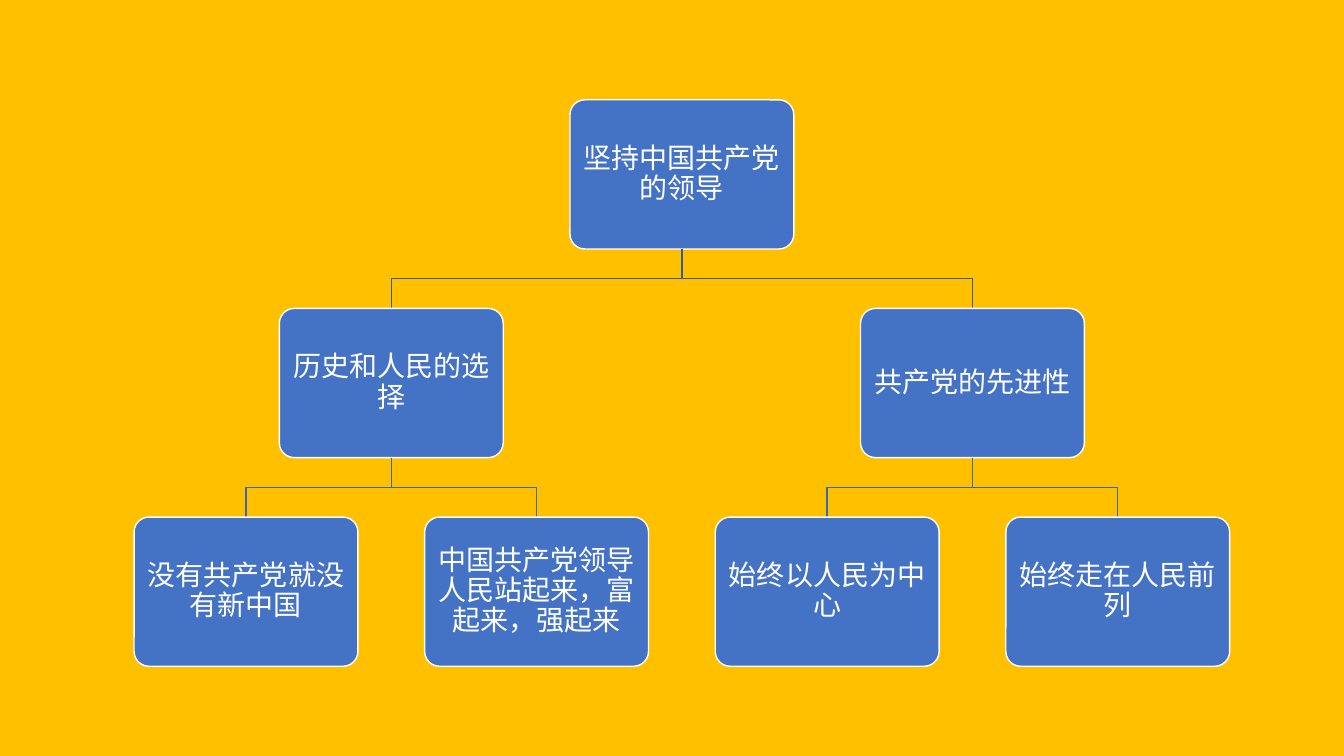
import pptx
import pptx.util
import pptx.dml.color
import pptx.enum.shapes
import pptx.enum.text
import lxml.etree
from pptx.oxml.ns import qn

Inches, Pt, RGBColor = pptx.util.Inches, pptx.util.Pt, pptx.dml.color.RGBColor

GOLD = RGBColor(0xFF, 0xC0, 0x00)
BLUE = RGBColor(0x44, 0x72, 0xC4)
WHITE = RGBColor(0xFF, 0xFF, 0xFF)
LINE_COLORS = [RGBColor(0x36, 0x5B, 0x9D), RGBColor(0x3E, 0x67, 0xB2)]
FONT = "Noto Sans CJK SC"

# Grid: column centres and row tops
FIRST_CENTRE, COLUMN_STEP = 2.44, 1.441
FIRST_TOP, ROW_STEP = 0.99, 2.07
BOX_WIDTH, BOX_HEIGHT = 2.22, 1.48

# Text, column, row, column of the parent
BOXES = [
    ("坚持中国共产党的领导", 3, 0, None),
    ("历史和人民的选择", 1, 1, 3),
    ("没有共产党就没有新中国", 0, 2, 1),
    ("中国共产党领导人民站起来，富起来，强起来", 2, 2, 1),
    ("共产党的先进性", 5, 1, 3),
    ("始终以人民为中心", 4, 2, 5),
    ("始终走在人民前列", 6, 2, 5),
]


def centre_of(column):
    return Inches(FIRST_CENTRE + column * COLUMN_STEP)


presentation = pptx.Presentation()
presentation.slide_width = Inches(13.33)
presentation.slide_height = Inches(7.5)
slide = presentation.slides.add_slide(presentation.slide_layouts[6])
slide.background.fill.solid()
slide.background.fill.fore_color.rgb = GOLD

for text, column, row, parent_column in BOXES:
    centre = centre_of(column)
    top = Inches(FIRST_TOP + row * ROW_STEP)

    # Branch from the parent
    if parent_column is not None:
        parent_centre = centre_of(parent_column)
        parent_bottom = top - Inches(ROW_STEP - BOX_HEIGHT)
        middle = (parent_bottom + top) // 2
        builder = slide.shapes.build_freeform(parent_centre, parent_bottom)
        builder.add_line_segments(
            [(parent_centre, middle), (centre, middle), (centre, top)], close=False)
        branch = builder.convert_to_shape()
        branch.shadow.inherit = False
        branch.fill.background()
        branch.line.color.rgb = LINE_COLORS[row - 1]
        branch.line.width = Pt(1)

    # Box
    box = slide.shapes.add_shape(
        pptx.enum.shapes.MSO_SHAPE.ROUNDED_RECTANGLE,
        centre - Inches(BOX_WIDTH) // 2, top, Inches(BOX_WIDTH), Inches(BOX_HEIGHT))
    box.adjustments[0] = 0.1
    box.shadow.inherit = False
    box.fill.solid()
    box.fill.fore_color.rgb = BLUE
    box.line.color.rgb = WHITE
    box.line.width = Pt(1)

    # Label
    frame = box.text_frame
    frame.word_wrap = True
    frame.vertical_anchor = pptx.enum.text.MSO_ANCHOR.MIDDLE
    frame.margin_left = frame.margin_right = Inches(0.08)
    frame.margin_top = frame.margin_bottom = Inches(0.08)
    paragraph = frame.paragraphs[0]
    paragraph.alignment = pptx.enum.text.PP_ALIGN.CENTER
    paragraph.line_spacing = 0.9
    run = paragraph.add_run()
    run.text = text
    run.font.size = Pt(20)
    run.font.color.rgb = WHITE
    run.font.name = FONT
    east_asian = lxml.etree.SubElement(run.font._element, qn("a:ea"))
    east_asian.set("typeface", FONT)

presentation.save("out.pptx")
